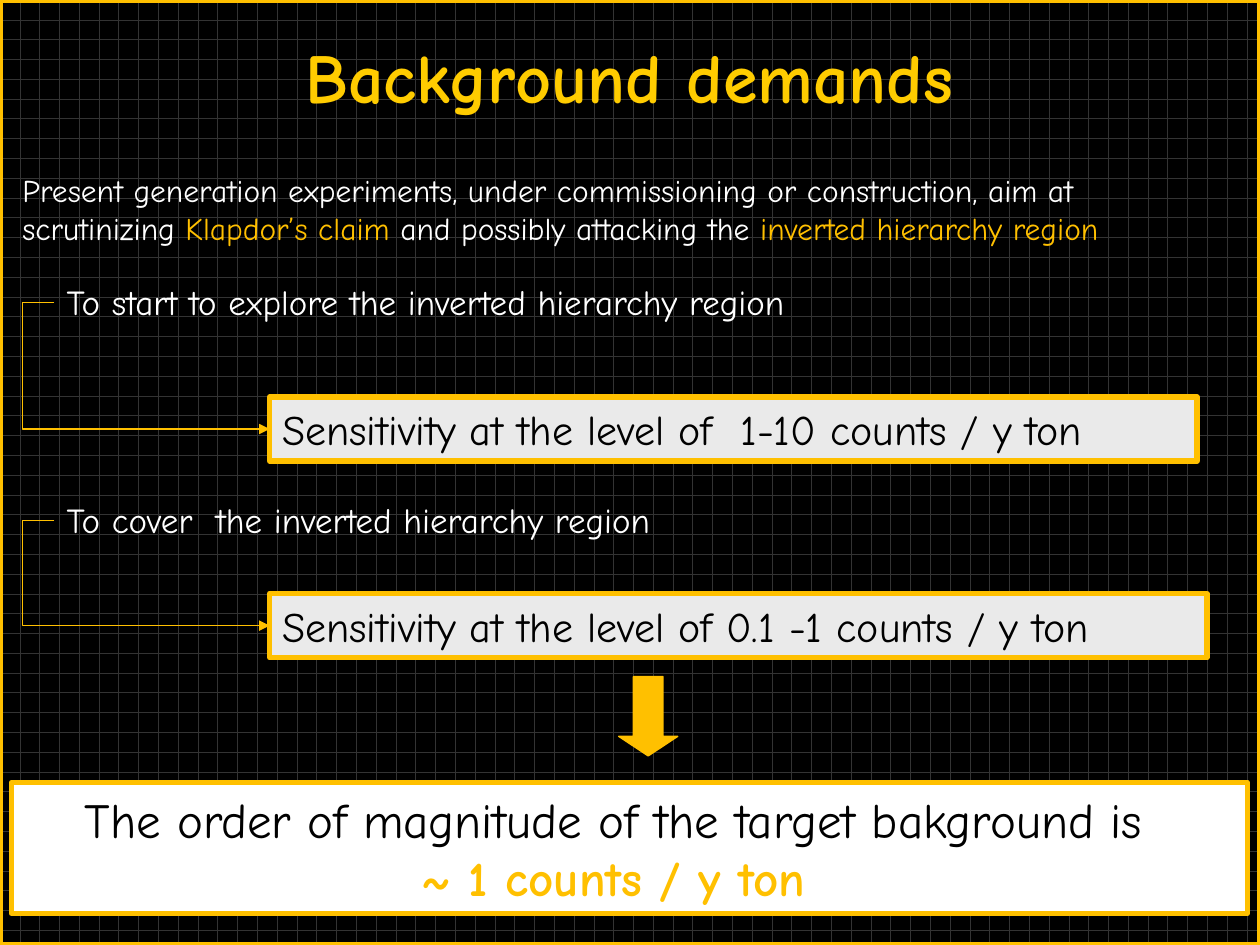
from dataclasses import dataclass

from lxml import etree
from pptx import Presentation
from pptx.dml.color import RGBColor
from pptx.enum.dml import MSO_PATTERN
from pptx.enum.shapes import MSO_CONNECTOR, MSO_SHAPE
from pptx.enum.text import MSO_ANCHOR, PP_ALIGN
from pptx.oxml.ns import qn
from pptx.util import Inches, Pt

RECT, DOWN_ARROW = MSO_SHAPE.RECTANGLE, MSO_SHAPE.DOWN_ARROW
ELBOW = MSO_CONNECTOR.ELBOW
LEFT, CENTER = PP_ALIGN.LEFT, PP_ALIGN.CENTER
TOP, MIDDLE = MSO_ANCHOR.TOP, MSO_ANCHOR.MIDDLE

# The slide is a grid of 100 columns by 75 rows of square cells
COLS, ROWS, CELL = 100, 75, 0.1


@dataclass(frozen=True)
class Theme:
    font: str = "Comic Neue"
    ink: str = "000000"
    paper: str = "FFFFFF"
    grid: str = "333333"
    accent: str = "FFC000"
    title: str = "FFCC00"
    panel: str = "EAEAEA"
    title_size: int = 40
    intro_size: int = 18
    label_size: int = 20
    panel_size: int = 24
    result_size: int = 28
    frame: float = 3
    thin: float = 0.75


T = Theme()


@dataclass(frozen=True)
class Box:
    col: float
    row: float
    cols: float
    rows: float


@dataclass(frozen=True)
class Run:
    text: str
    color: str
    bold: bool = False


@dataclass(frozen=True)
class Step:
    label: str
    demand: str
    label_row: float
    panel_row: float
    panel_cols: float


STEPS = (
    Step("To start to explore the inverted hierarchy region",
         "Sensitivity at the level of  1-10 counts / y ton", 21.8, 31.5, 73.6),
    Step("To cover  the inverted hierarchy region",
         "Sensitivity at the level of 0.1 -1 counts / y ton", 39.1, 47.1, 74.4),
)
LABEL_COL, PANEL_COL, BEND_COL = 4.3, 21.4, 1.8
LABEL_ROWS, PANEL_ROWS = 4.4, 5.1


def cells(n: float) -> int:
    return Inches(n * CELL)


def place(box: Box) -> tuple:
    return cells(box.col), cells(box.row), cells(box.cols), cells(box.rows)


def rgb(color: str) -> RGBColor:
    return RGBColor.from_string(color)


def write(sp, paragraphs: list[list[Run]], size: int, align=LEFT, anchor=TOP) -> None:
    tf = sp.text_frame
    tf.word_wrap = True
    tf.vertical_anchor = anchor
    for i, runs in enumerate(paragraphs):
        p = tf.add_paragraph() if i else tf.paragraphs[0]
        p.alignment = align
        for run in runs:
            r = p.add_run()
            r.text = run.text
            r.font.name, r.font.size, r.font.bold = T.font, Pt(size), run.bold
            r.font.color.rgb = rgb(run.color)


def add_text(slide, box: Box, runs: list[Run], size: int, align=LEFT) -> None:
    write(slide.shapes.add_textbox(*place(box)), [runs], size, align)


def add_shape(slide, kind, box: Box, fill: str | None, width: float):
    sp = slide.shapes.add_shape(kind, *place(box))
    sp.shadow.inherit = False
    if fill:
        sp.fill.solid()
        sp.fill.fore_color.rgb = rgb(fill)
    else:
        sp.fill.background()
    sp.line.color.rgb = rgb(T.accent)
    sp.line.width = Pt(width)
    return sp


def add_elbow(slide, start_row: float, end_row: float) -> None:
    """Arrow that leaves the label to the left and comes back to the panel."""
    cx = slide.shapes.add_connector(ELBOW, cells(LABEL_COL), cells(start_row),
                                    cells(PANEL_COL), cells(end_row))
    cx.line.color.rgb = rgb(T.accent)
    cx.line.width = Pt(T.thin)
    bend = (BEND_COL - LABEL_COL) / (PANEL_COL - LABEL_COL)
    props = cx._element.spPr
    guides = props.find(qn("a:prstGeom")).get_or_add_avLst()
    etree.SubElement(guides, qn("a:gd"), name="adj1", fmla=f"val {round(bend * 100000)}")
    etree.SubElement(props.find(qn("a:ln")), qn("a:tailEnd"), type="triangle")
    etree.SubElement(props, qn("a:effectLst"))


def add_step(slide, step: Step) -> None:
    label = Box(LABEL_COL, step.label_row, 66.9, LABEL_ROWS)
    panel = Box(PANEL_COL, step.panel_row, step.panel_cols, PANEL_ROWS)
    add_text(slide, label, [Run(step.label, T.paper)], T.label_size)
    sp = add_shape(slide, RECT, panel, T.panel, T.frame)
    write(sp, [[Run(step.demand, T.ink)]], T.panel_size, anchor=MIDDLE)
    add_elbow(slide, step.label_row + LABEL_ROWS / 2, step.panel_row + PANEL_ROWS / 2)


def main() -> None:
    prs = Presentation()
    prs.slide_width, prs.slide_height = cells(COLS), cells(ROWS)
    slide = prs.slides.add_slide(prs.slide_layouts[6])

    # Dotted background and frame
    fill = slide.background.fill
    fill.patterned()
    fill.pattern = MSO_PATTERN.DOTTED_GRID
    fill.fore_color.rgb, fill.back_color.rgb = rgb(T.grid), rgb(T.ink)
    add_shape(slide, RECT, Box(0, 0, COLS, ROWS), None, T.frame)

    # Title and introduction
    add_text(slide, Box(5.1, 2.2, 89.7, 12.5),
             [Run("Background demands", T.title, True)], T.title_size, CENTER)
    add_text(slide, Box(0.8, 13.1, 96.5, 7.1), [
        Run("Present generation experiments, under commissioning or construction, "
            "aim at scrutinizing ", T.paper),
        Run("Klapdor’s claim ", T.accent),
        Run("and possibly attacking the ", T.paper),
        Run("inverted hierarchy region", T.accent),
    ], T.intro_size)

    # Steps, each with its demand
    for step in STEPS:
        add_step(slide, step)

    # Conclusion
    arrow = add_shape(slide, DOWN_ARROW, Box(49.1, 53.7, 4.7, 6.3), T.accent, T.thin)
    arrow.adjustments[0], arrow.adjustments[1] = 0.5, 0.33
    result = add_shape(slide, RECT, Box(0.9, 62.1, 98.1, 10.4), T.paper, T.frame)
    write(result, [
        [Run("The order of magnitude of the target bakground is", T.ink)],
        [Run("~ 1 counts / y ton", T.accent, True)],
    ], T.result_size, CENTER, MIDDLE)
    first = result.text_frame.paragraphs[0]
    first._p.get_or_add_pPr().set("marR", str(cells(2.5)))

    prs.save("out.pptx")


if __name__ == "__main__":
    main()
